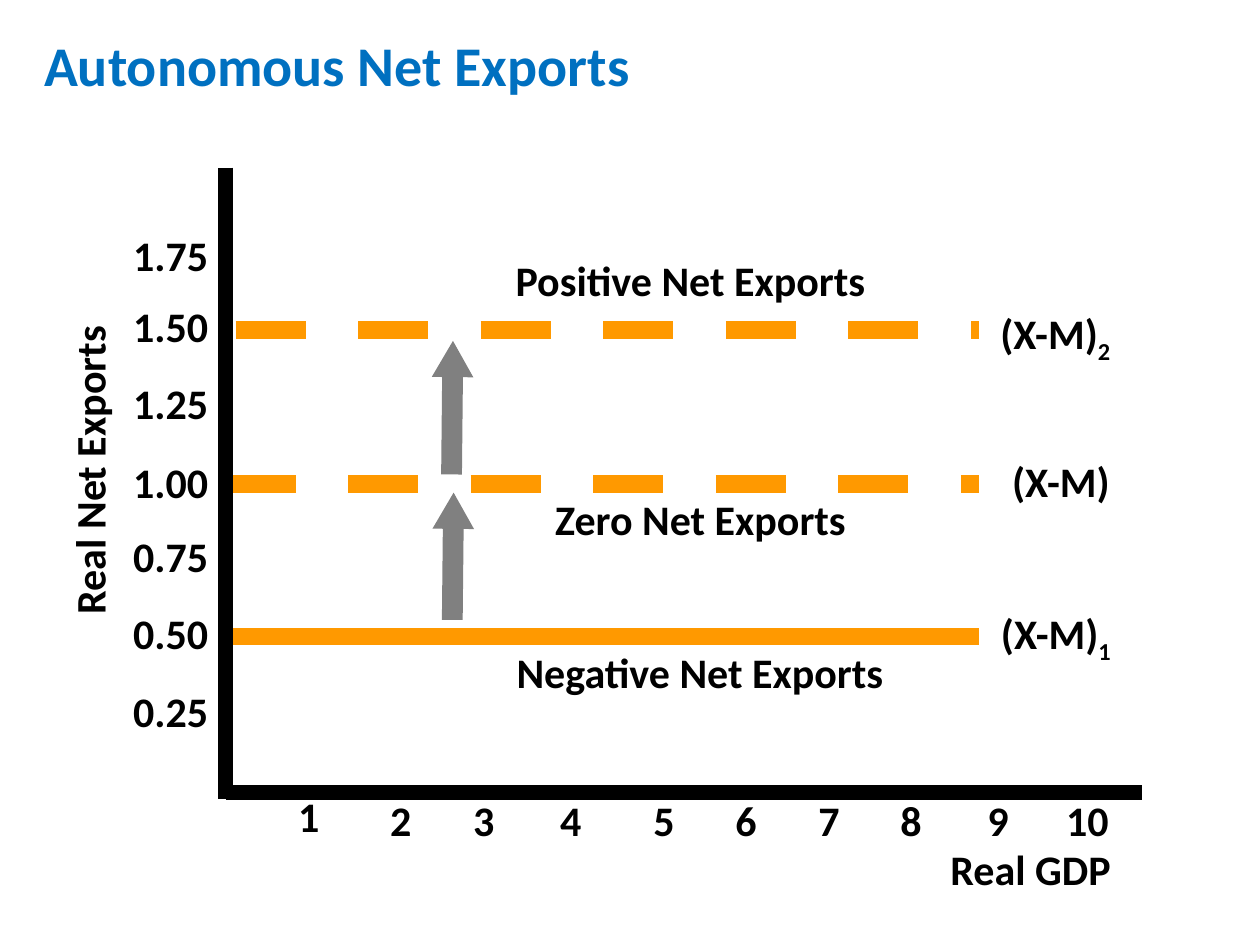
from lxml.etree import SubElement
from pptx import Presentation
from pptx.dml.color import RGBColor
from pptx.enum.dml import MSO_LINE
from pptx.enum.shapes import MSO_CONNECTOR, MSO_SHAPE
from pptx.enum.text import MSO_ANCHOR, MSO_AUTO_SIZE, PP_ALIGN
from pptx.oxml.ns import qn
from pptx.util import Inches, Pt

COLORS = {"title": "0070C0", "text": "000000", "axis": "000000",
          "exports": "FF9900", "arrow": "808080", "frame": "FFFFFF"}
FONT = "Calibri"
LABEL_HEIGHT = 0.46
ORIGIN_X, ORIGIN_Y = 1.79, 6.29
LINE_END_X = 7.77

TITLE = "Autonomous Net Exports"
# start x, y, dash
EXPORT_LINES = [(ORIGIN_X, 5.05, None), (ORIGIN_X, 3.84, MSO_LINE.DASH),
                (1.87, 2.62, MSO_LINE.DASH)]
# text, centre y
Y_TICKS = [("1.75", 2.05), ("1.50", 2.61), ("1.25", 3.22), ("1.00", 3.85),
           ("0.75", 4.44), ("0.50", 5.05), ("0.25", 5.67)]
# text, centre x, top
X_TICKS = [("1", 2.45, 6.27), ("2", 3.18, 6.3), ("3", 3.84, 6.3),
           ("4", 4.53, 6.3), ("5", 5.27, 6.3), ("6", 5.92, 6.3),
           ("7", 6.58, 6.3), ("8", 7.23, 6.3), ("9", 7.92, 6.3),
           ("10", 8.63, 6.3)]
# text, subscript, left, top, width
LABELS = [("Real GDP", "", 7.28, 6.69, 1.8),
          ("Positive Net Exports", "", 3.35, 2.02, 4.26),
          ("Zero Net Exports", "", 3.84, 3.91, 3.44),
          ("Negative Net Exports", "", 3.18, 5.13, 4.75),
          ("(X-M)", "2", 7.75, 2.4, 1.25),
          ("(X-M)", "", 7.85, 3.61, 1.14),
          ("(X-M)", "1", 7.77, 4.78, 1.22)]
# left, top, length before rotation
SHIFT_ARROWS = [(3.06, 3.07, 1.06), (3.09, 4.25, 1.01)]


def color(name):
    return RGBColor.from_string(COLORS[name])


def write_text(shape, text, subscript="", size=24, fill="text",
               align=PP_ALIGN.CENTER):
    frame = shape.text_frame
    frame.word_wrap = True
    frame.auto_size = MSO_AUTO_SIZE.NONE
    frame.vertical_anchor = MSO_ANCHOR.TOP
    paragraph = frame.paragraphs[0]
    paragraph.alignment = align
    paragraph.line_spacing = 0.9
    for part, baseline in ((text, None), (subscript, "-25000")):
        if not part:
            continue
        run = paragraph.add_run()
        run.text = part
        run.font.name = FONT
        run.font.size = Pt(size)
        run.font.bold = True
        run.font.color.rgb = color(fill)
        if baseline:
            run.font._element.set("baseline", baseline)


def add_label(slide, text, left, top, width, **text_format):
    box = slide.shapes.add_textbox(Inches(left), Inches(top), Inches(width),
                                   Inches(LABEL_HEIGHT))
    write_text(box, text, **text_format)


def add_line(slide, start, end, fill, width, dash=None):
    line = slide.shapes.add_connector(
        MSO_CONNECTOR.STRAIGHT, *(Inches(value) for value in (*start, *end)))
    line.line.color.rgb = color(fill)
    line.line.width = Pt(width)
    if dash:
        line.line.dash_style = dash
    SubElement(line._element.spPr, qn("a:effectLst"))


def add_rotated_shape(slide, kind, left, top, width, height, rotation):
    shape = slide.shapes.add_shape(kind, Inches(left), Inches(top),
                                   Inches(width), Inches(height))
    shape.rotation = rotation
    shape.shadow.inherit = False
    return shape


def main():
    presentation = Presentation()
    presentation.slide_width = Inches(10)
    presentation.slide_height = Inches(7.5)
    slide = presentation.slides.add_slide(presentation.slide_layouts[5])

    title = slide.shapes.title
    title.left, title.top = Inches(0.25), Inches(0.25)
    title.width, title.height = Inches(6.17), Inches(0.59)
    write_text(title, TITLE, size=32, fill="title", align=PP_ALIGN.LEFT)

    for start_x, y, dash in EXPORT_LINES:
        add_line(slide, (start_x, y), (LINE_END_X, y), "exports", 10, dash)
    add_line(slide, (ORIGIN_X, ORIGIN_Y), (9.06, ORIGIN_Y), "axis", 9)
    add_line(slide, (ORIGIN_X, 1.33), (ORIGIN_X, 6.34), "axis", 9)

    for text, center_y in Y_TICKS:
        add_label(slide, text, 0.5, center_y - LABEL_HEIGHT / 2, 1.25,
                  align=PP_ALIGN.RIGHT)
    tick_width = 0.9
    for text, center_x, top in X_TICKS:
        add_label(slide, text, center_x - tick_width / 2, top, tick_width)
    for text, subscript, left, top, width in LABELS:
        add_label(slide, text, left, top, width, subscript=subscript)

    axis_title = add_rotated_shape(slide, MSO_SHAPE.RECTANGLE,
                                   -0.91, 3.5, 3.28, LABEL_HEIGHT, 270)
    axis_title.fill.background()
    axis_title.line.color.rgb = color("frame")
    axis_title.line.width = Pt(0.75)
    write_text(axis_title, "Real Net Exports")

    for left, top, length in SHIFT_ARROWS:
        arrow = add_rotated_shape(slide, MSO_SHAPE.RIGHT_ARROW,
                                  left, top, length, 0.33, 270.6)
        arrow.adjustments[0] = 0.5
        arrow.adjustments[1] = 0.87
        arrow.fill.solid()
        arrow.fill.fore_color.rgb = color("arrow")
        arrow.line.fill.background()

    presentation.save("out.pptx")


if __name__ == "__main__":
    main()
